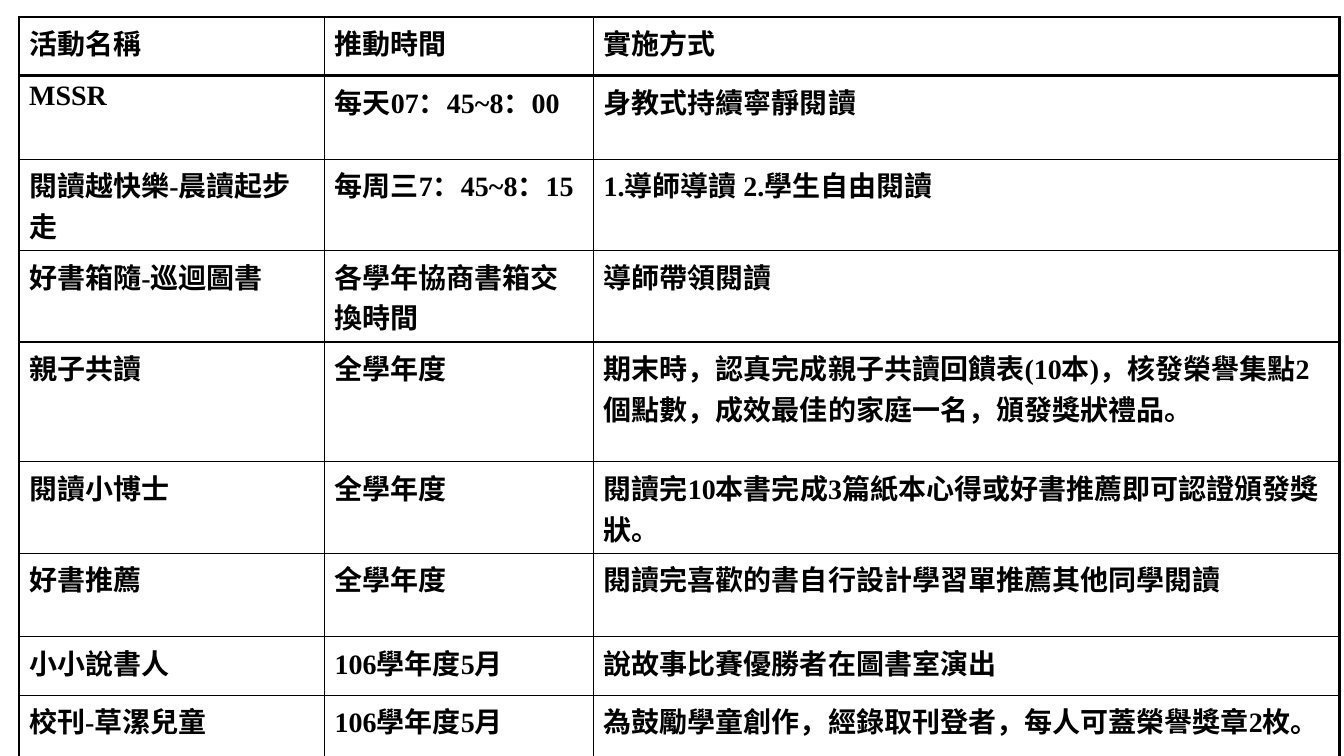
from lxml.etree import SubElement
from pptx import Presentation
from pptx.dml.color import RGBColor
from pptx.oxml.ns import qn
from pptx.util import Cm, Pt

COLORS = {"text": "000000", "border": "000000"}
THIN, THICK = 1, 2
COLUMN_WIDTHS = [7.7, 6.78, 18.8]
ROW_HEIGHTS = [1.47, 2.11, 2.11, 2.11, 3.02, 2.11, 2.11, 1.47, 2.11]
ACTIVITIES = [
    ("活動名稱", "推動時間", "實施方式"),
    ("MSSR", "每天07：45~8：00", "身教式持續寧靜閱讀"),
    ("閱讀越快樂-晨讀起步走", "每周三7：45~8：15", "1.導師導讀 2.學生自由閱讀"),
    ("好書箱隨-巡迴圖書", "各學年協商書箱交換時間", "導師帶領閱讀"),
    ("親子共讀", "全學年度",
     "期末時，認真完成親子共讀回饋表(10本)，核發榮譽集點2個點數，成效最佳的家庭一名，頒發獎狀禮品。"),
    ("閱讀小博士", "全學年度", "閱讀完10本書完成3篇紙本心得或好書推薦即可認證頒發獎狀。"),
    ("好書推薦", "全學年度", "閱讀完喜歡的書自行設計學習單推薦其他同學閱讀"),
    ("小小說書人", "106學年度5月", "說故事比賽優勝者在圖書室演出"),
    ("校刊-草漯兒童", "106學年度5月", "為鼓勵學童創作，經錄取刊登者，每人可蓋榮譽獎章2枚。"),
]
ARIAL_CELLS = {(6, 0), (6, 2)}


def write_text(text_frame, text, font="Times New Roman", size=20, bold=True, color="text"):
    """Write one formatted run into a text frame."""
    run = text_frame.paragraphs[0].add_run()
    run.text = text
    run.font.name = font
    run.font.size = Pt(size)
    run.font.bold = bold
    run.font.color.rgb = RGBColor.from_string(COLORS[color])


def set_borders(cell, widths):
    """Draw the cell's borders from a mapping of side letter to width in points."""
    properties = cell._tc.get_or_add_tcPr()
    for side in "LRTB":
        line = SubElement(properties, qn(f"a:ln{side}"), w=str(Pt(widths[side])))
        fill = SubElement(line, qn("a:solidFill"))
        SubElement(fill, qn("a:srgbClr"), val=COLORS["border"])


def add_activity_table(slide, left, top, width, height):
    """Place the table of reading activities in the given box."""
    last_row, last_column = len(ROW_HEIGHTS) - 1, len(COLUMN_WIDTHS) - 1
    table = slide.shapes.add_table(
        len(ROW_HEIGHTS), len(COLUMN_WIDTHS), left, top, width, height).table
    table.first_row = table.horz_banding = False
    for column, share in zip(table.columns, COLUMN_WIDTHS):
        column.width = int(width * share / sum(COLUMN_WIDTHS))
    for row, share in zip(table.rows, ROW_HEIGHTS):
        row.height = int(height * share / sum(ROW_HEIGHTS))
    for row_index, activity in enumerate(ACTIVITIES):
        for column_index, text in enumerate(activity):
            cell = table.cell(row_index, column_index)
            set_borders(cell, {
                "L": THICK if column_index == 0 else THIN,
                "R": THICK if column_index == last_column else THIN,
                "T": THICK if row_index in (0, 1) else THIN,
                "B": THICK if row_index in (0, last_row) else THIN,
            })
            cell.fill.background()
            is_arial = (row_index, column_index) in ARIAL_CELLS
            write_text(cell.text_frame, text, font="Arial" if is_arial else "Times New Roman")


def main():
    """Build and save the presentation."""
    presentation = Presentation()
    presentation.slide_width = Cm(33.87)
    presentation.slide_height = Cm(19.05)
    slide = presentation.slides.add_slide(presentation.slide_layouts[6])
    add_activity_table(slide, Cm(0.48), Cm(0.43), Cm(33.28), Cm(18.62))
    presentation.save("out.pptx")


if __name__ == "__main__":
    main()
